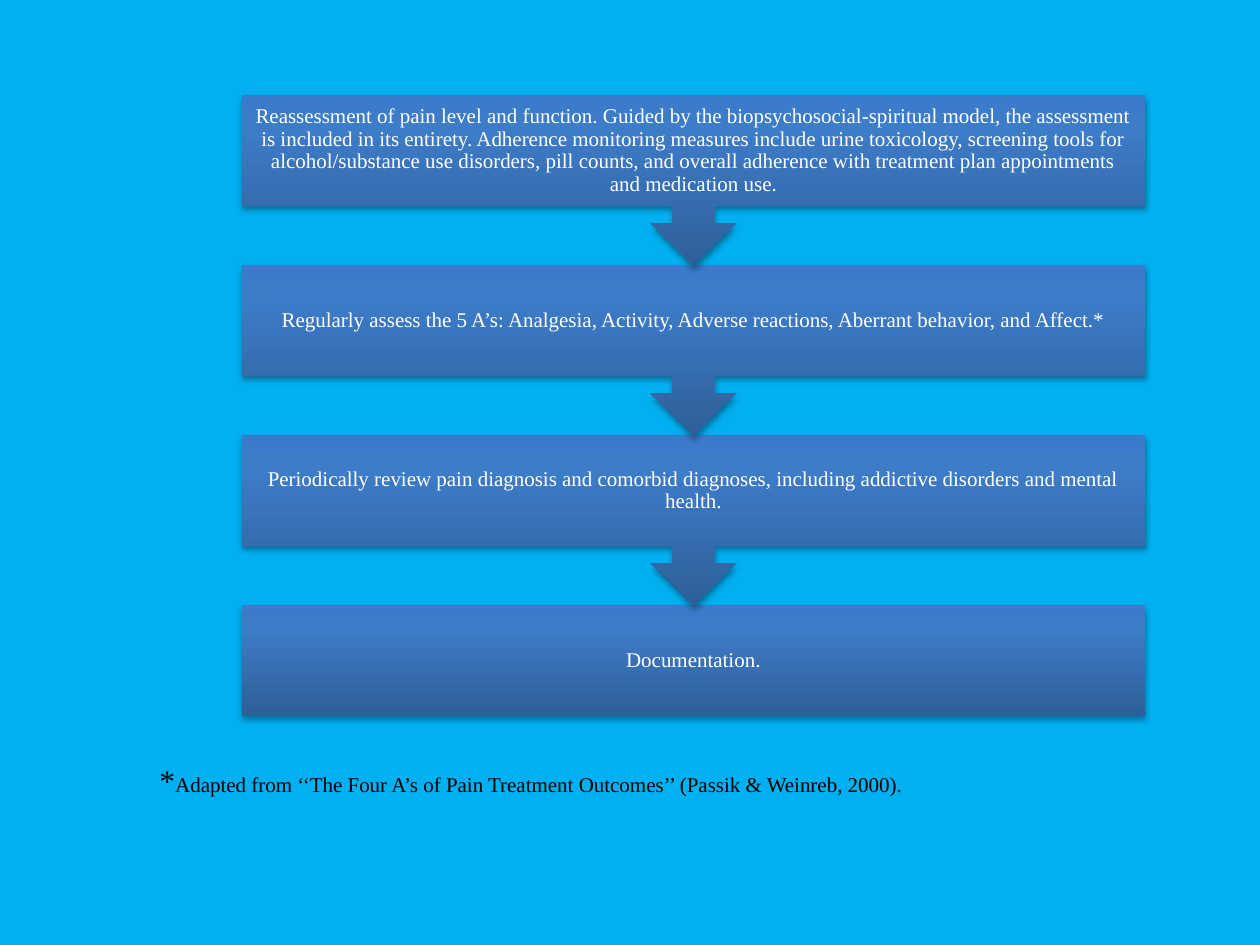
from copy import deepcopy

from lxml import etree
from pptx import Presentation, util as u
from pptx.dml.color import RGBColor
from pptx.enum import shapes, text
from pptx.oxml import ns

PX = 914400 / 126
FONT = "Times New Roman"
BACKGROUND = RGBColor(0x00, 0xB0, 0xF0)
WHITE = RGBColor(0xFF, 0xFF, 0xFF)
BLACK = RGBColor(0x00, 0x00, 0x00)
GRADIENT = [(0, RGBColor(0x2F, 0x5F, 0x99)),
            (0.8, RGBColor(0x3D, 0x7C, 0xC7)),
            (1, RGBColor(0x3A, 0x7C, 0xCB))]

STEPS = [
    "Reassessment of pain level and function. Guided by the "
    "biopsychosocial-spiritual model, the assessment is included in its "
    "entirety. Adherence monitoring measures include urine toxicology, "
    "screening tools for alcohol/substance use disorders, pill counts, and "
    "overall adherence with treatment plan appointments and medication use.",
    "Regularly assess the 5 A’s: Analgesia, Activity, Adverse reactions, "
    "Aberrant behavior, and Affect.*",
    "Periodically review pain diagnosis and comorbid diagnoses, including "
    "addictive disorders and mental health.",
    "Documentation.",
]
STEP_LEFT, STEP_TOP, STEP_WIDTH, STEP_PITCH = 242, 95, 903, 170
BOX_HEIGHT, CALLOUT_HEIGHT = 111, 171


def px(*values):
    return [u.Emu(round(v * PX)) for v in values]


def add_run(p, content, size, color):
    r = p.add_run()
    r.text = content
    r.font.name = FONT
    r.font.size = u.Pt(size)
    r.font.color.rgb = color


def fill_gradient(sp):
    """Three-stop gradient, dark at the bottom."""
    sp.fill.gradient()
    sp.fill.gradient_angle = 90
    stop_list = sp._element.spPr.find(".//" + ns.qn("a:gsLst"))
    stop_list.append(deepcopy(stop_list[-1]))
    for stop, (position, color) in zip(sp.fill.gradient_stops, GRADIENT):
        stop.position = position
        stop.color.rgb = color


def add_shadow(sp):
    """Soft shadow falling straight down."""
    sp.shadow.inherit = False
    effects = sp._element.spPr.find(ns.qn("a:effectLst"))
    shadow = etree.SubElement(effects, ns.qn("a:outerShdw"), blurRad="40000",
                              dist="23000", dir="5400000", rotWithShape="0")
    color = etree.SubElement(shadow, ns.qn("a:srgbClr"), val="000000")
    etree.SubElement(color, ns.qn("a:alpha"), val="35000")


def add_step(group, kind, top, height, content):
    sp = group.shapes.add_shape(kind, *px(STEP_LEFT, top, STEP_WIDTH, height))
    fill_gradient(sp)
    sp.line.fill.background()
    add_shadow(sp)
    tf = sp.text_frame
    tf.word_wrap = True
    tf.vertical_anchor = text.MSO_ANCHOR.MIDDLE
    tf.margin_left = tf.margin_right = u.Inches(0.09)
    tf.margin_top = tf.margin_bottom = u.Inches(0.09)
    p = tf.paragraphs[0]
    p.alignment = text.PP_ALIGN.CENTER
    p.line_spacing = 0.9
    add_run(p, content, 12, WHITE)


def add_footnote(s):
    tf = s.shapes.add_textbox(*px(147, 755, 951, 50)).text_frame
    tf.word_wrap = True
    tf.auto_size = text.MSO_AUTO_SIZE.SHAPE_TO_FIT_TEXT
    p = tf.paragraphs[0]
    add_run(p, "*", 18, BLACK)
    add_run(p, "Adapted from ‘‘The Four A’s of Pain Treatment Outcomes’’ "
               "(Passik & Weinreb, 2000).", 12, BLACK)


def main():
    prs = Presentation()
    prs.slide_width, prs.slide_height = px(1260, 945)
    s = prs.slides.add_slide(prs.slide_layouts[6])
    s.background.fill.solid()
    s.background.fill.fore_color.rgb = BACKGROUND

    # Process steps, from the last up so each arrow overlaps the next box
    group = s.shapes.add_group_shape()
    last = len(STEPS) - 1
    for i in range(last, -1, -1):
        if i == last:
            kind, height = shapes.MSO_SHAPE.RECTANGLE, BOX_HEIGHT
        else:
            kind, height = shapes.MSO_SHAPE.DOWN_ARROW_CALLOUT, CALLOUT_HEIGHT
        add_step(group, kind, STEP_TOP + i * STEP_PITCH, height, STEPS[i])

    # Source note
    add_footnote(s)
    prs.save("out.pptx")


if __name__ == "__main__":
    main()
